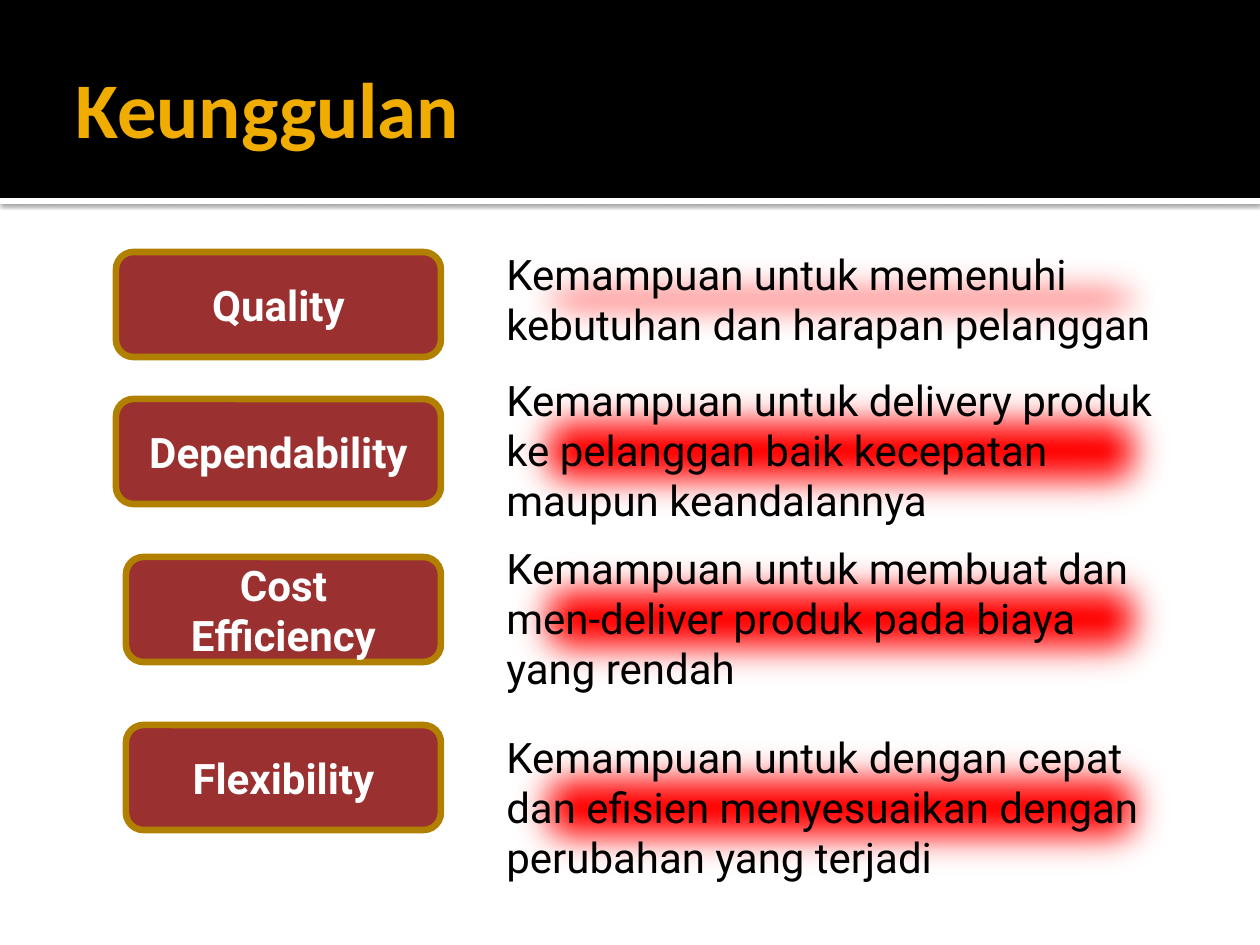
from lxml import etree
from pptx import Presentation
from pptx.dml.color import RGBColor
from pptx.enum.shapes import MSO_SHAPE
from pptx.enum.text import MSO_ANCHOR, MSO_AUTO_SIZE, PP_ALIGN
from pptx.oxml.ns import qn
from pptx.util import Emu, Pt

PX = 914400 / 126
TITLE = "Keunggulan"
LABEL_RIGHT, LABEL_HEIGHT = 441, 105
TEXT_LEFT, TEXT_WIDTH = 494, 693
ADVANTAGES = [
    {"label": "Quality", "box": (116, 252), "text_top": 242, "text_height": 115,
     "text": "Kemampuan untuk memenuhi kebutuhan dan harapan pelanggan"},
    {"label": "Dependability", "box": (116, 399), "text_top": 368, "text_height": 165,
     "text": "Kemampuan untuk delivery produk ke pelanggan baik kecepatan maupun keandalannya"},
    {"label": "Cost Efficiency", "box": (126, 557), "text_top": 536, "text_height": 165,
     "text": "Kemampuan untuk membuat dan men-deliver produk pada biaya yang rendah"},
    {"label": "Flexibility", "box": (126, 725), "text_top": 725, "text_height": 165,
     "text": "Kemampuan untuk dengan cepat dan efisien menyesuaikan dengan perubahan yang terjadi"},
]


def px(length):
    """Turn pixels into EMU."""
    return Emu(round(length * PX))


def color(value):
    """Turn a hex string into a colour."""
    return RGBColor.from_string(value)


def add_box(slide, kind, bounds, fill, line=None):
    """Add a filled shape without shadow."""
    shape = slide.shapes.add_shape(kind, *map(px, bounds))
    shape.shadow.inherit = False
    shape.fill.solid()
    shape.fill.fore_color.rgb = color(fill)
    if line:
        shape.line.color.rgb = color(line)
        shape.line.width = Pt(3.78)
    else:
        shape.line.fill.background()
    return shape


def write(shape, text, size, font, value, bold=False, align=PP_ALIGN.LEFT, anchor=MSO_ANCHOR.MIDDLE):
    """Put one formatted paragraph in a shape."""
    frame = shape.text_frame
    frame.text = text
    frame.word_wrap = True
    frame.vertical_anchor = anchor
    paragraph = frame.paragraphs[0]
    paragraph.alignment = align
    run_font = paragraph.runs[0].font
    run_font.size, run_font.name, run_font.bold = Pt(size), font, bold
    run_font.color.rgb = color(value)


def add_effect(shape, name, **attributes):
    """Add an effect to a shape and return its element."""
    effects = shape.element.spPr.find(qn("a:effectLst"))
    return etree.SubElement(effects, qn(name), {key: str(value) for key, value in attributes.items()})


def add_header(slide):
    """Add the title band, its shadowed edge and the title."""
    edge = add_box(slide, MSO_SHAPE.RECTANGLE, (0, 198, 1260, 6), "FFFFFF")
    shadow = add_effect(edge, "a:outerShdw", blurRad=Pt(2.5), dist=Pt(0.8), dir=5400000,
                        algn="t", rotWithShape=0)
    shade = etree.SubElement(shadow, qn("a:srgbClr"), val="000000")
    etree.SubElement(shade, qn("a:alpha"), val="60000")
    add_box(slide, MSO_SHAPE.RECTANGLE, (0, 0, 1260, 198), "000000")
    title = slide.shapes.add_textbox(*map(px, (63, 21, 1134, 173)))
    write(title, TITLE, 45, "Calibri", "F0AD00", bold=True)
    title.text_frame.margin_right = px(6)


def add_advantage(slide, advantage):
    """Add one label and its soft-edged description."""
    left, top = advantage["box"]
    label = add_box(slide, MSO_SHAPE.ROUNDED_RECTANGLE,
                    (left, top, LABEL_RIGHT - left, LABEL_HEIGHT), "9A3130", "B28000")
    write(label, advantage["label"], 24, "Roboto", "FFFFFF", bold=True, align=PP_ALIGN.CENTER)
    bounds = (TEXT_LEFT, advantage["text_top"], TEXT_WIDTH, advantage["text_height"])
    description = add_box(slide, MSO_SHAPE.RECTANGLE, bounds, "FF0000")
    add_effect(description, "a:softEdge", rad=Pt(25))
    write(description, advantage["text"], 24, "Roboto", "000000", anchor=MSO_ANCHOR.TOP)
    description.text_frame.auto_size = MSO_AUTO_SIZE.SHAPE_TO_FIT_TEXT


def main():
    """Build and save the slide."""
    presentation = Presentation()
    presentation.slide_width, presentation.slide_height = px(1260), px(945)
    slide = presentation.slides.add_slide(presentation.slide_layouts[6])
    add_header(slide)
    for advantage in ADVANTAGES:
        add_advantage(slide, advantage)
    presentation.save("out.pptx")


if __name__ == "__main__":
    main()
